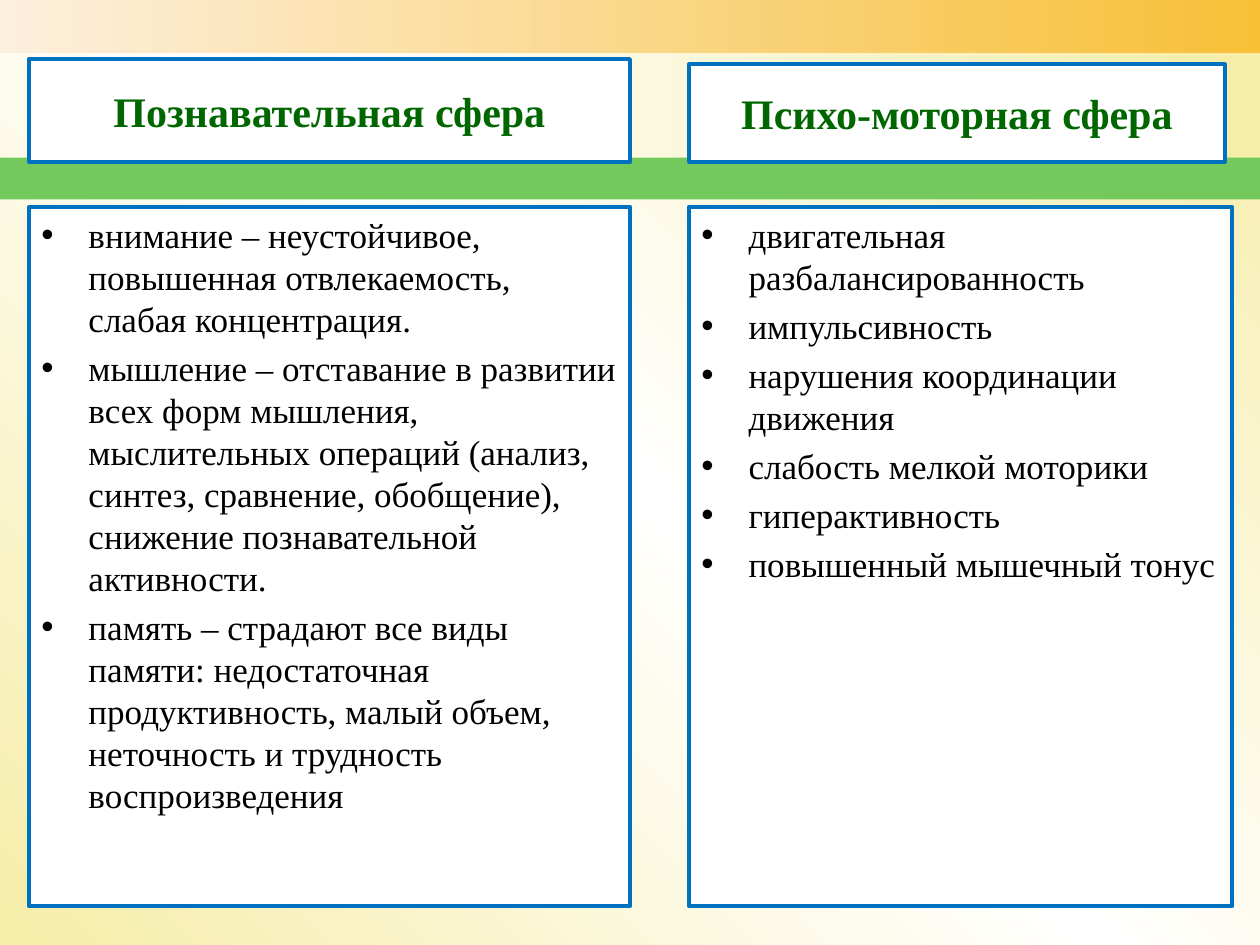
from copy import deepcopy
from dataclasses import dataclass

from lxml.etree import SubElement
from pptx import Presentation
from pptx.dml.color import RGBColor as Rgb
from pptx.enum.shapes import MSO_SHAPE as Shape
from pptx.enum.text import MSO_ANCHOR as Anchor, MSO_AUTO_SIZE as Auto, PP_ALIGN as Align
from pptx.oxml.ns import qn
from pptx.util import Cm, Pt


@dataclass(frozen=True)
class Theme:
    font: str = "Times New Roman"
    head: str = "006600"
    ink: str = "000000"
    edge: str = "0070C0"
    paper: str = "FFFFFF"
    cream: str = "F6EDA8"
    peach: str = "FDEFDD"
    gold: str = "F7C037"
    green: str = "73C95B"
    big: int = 24
    small: int = 20
    gap: int = 4
    rim: float = 2.25


T = Theme()

LEFT = {
    "head": "Познавательная сфера",
    "list": [
        "внимание – неустойчивое, повышенная отвлекаемость, слабая концентрация.",
        "мышление – отставание в развитии всех форм мышления, мыслительных операций "
        "(анализ, синтез, сравнение, обобщение), снижение познавательной активности.",
        "память – страдают все виды памяти: недостаточная продуктивность, малый объем, "
        "неточность и трудность воспроизведения",
    ],
}
RIGHT = {
    "head": "Психо-моторная сфера",
    "list": [
        "двигательная разбалансированность",
        "импульсивность",
        "нарушения координации движения",
        "слабость мелкой моторики",
        "гиперактивность",
        "повышенный мышечный тонус",
    ],
}

WIDE, HIGH = 25.4, 19.05
COL1, COL2 = 0.58, 13.89
TOP, TALL = 4.17, 14.1
INDENT = 0.95
BARS = [
    ((0, 0, WIDE, 1.07), [T.peach, T.gold]),
    ((5.51, 1.07, WIDE - 5.51, 2.11), [T.paper, T.cream]),
    ((0, 3.18, WIDE, 0.84), [T.green]),
]


def paint(fill, tints, angle=0):
    if len(tints) == 1:
        fill.solid()
        fill.fore_color.rgb = Rgb.from_string(tints[0])
        return
    fill.gradient()
    fill.gradient_angle = angle
    stops = fill._fill._gradFill.gsLst
    while len(stops) < len(tints):
        stops.append(deepcopy(stops[0]))
    for i, (stop, tint) in enumerate(zip(fill.gradient_stops, tints)):
        stop.position = i / (len(tints) - 1)
        stop.color.rgb = Rgb.from_string(tint)


def place(box, spot):
    box.left, box.top, box.width, box.height = map(Cm, spot)


def write(box, lines, size=T.small, tint=T.ink, bold=False,
          align=Align.LEFT, anchor=Anchor.TOP, dots=False):
    frame = box.text_frame
    frame.text = "\n".join(lines)
    frame.word_wrap = True
    frame.auto_size = Auto.NONE
    frame.vertical_anchor = anchor
    for i, para in enumerate(frame.paragraphs):
        if dots:
            props = para._p.get_or_add_pPr()
            props.set("marL", str(Cm(INDENT)))
            props.set("indent", str(-Cm(INDENT)))
            SubElement(props, qn("a:buFont"), typeface="Arial")
            SubElement(props, qn("a:buChar"), char="•")
        para.alignment = align
        para.space_before = Pt(T.gap if i else 0)
        for run in para.runs:
            font = run.font
            font.name, font.size, font.bold = T.font, Pt(size), bold
            font.color.rgb = Rgb.from_string(tint)


def panel(box, spot, lines, **form):
    place(box, spot)
    paint(box.fill, [T.paper])
    box.line.color.rgb = Rgb.from_string(T.edge)
    box.line.width = Pt(T.rim)
    write(box, lines, **form)


def main():
    deck = Presentation()
    deck.slide_width, deck.slide_height = Cm(WIDE), Cm(HIGH)
    slide = deck.slides.add_slide(deck.slide_layouts[1])
    shapes = slide.shapes
    paint(slide.background.fill, [T.cream, T.paper, T.cream], angle=45)

    for i, (spot, tints) in enumerate(BARS):
        bar = shapes.add_shape(Shape.RECTANGLE, *map(Cm, spot))
        bar.shadow.inherit = False
        bar.line.fill.background()
        paint(bar.fill, tints)
        shapes._spTree.insert(2 + i, bar._element)

    head = dict(size=T.big, tint=T.head, bold=True,
                align=Align.CENTER, anchor=Anchor.MIDDLE)
    blank = (0, 0, 1, 1)
    panel(shapes.title, (COL1, 1.19, 12.12, 2.08), [LEFT["head"]], **head)
    panel(slide.placeholders[1], (COL1, TOP, 12.12, TALL), LEFT["list"], dots=True)
    panel(shapes.add_textbox(*blank), (COL2, TOP, 10.95, TALL), RIGHT["list"], dots=True)
    panel(shapes.add_textbox(*blank), (COL2, 1.3, 10.8, 1.96), [RIGHT["head"]], **head)
    deck.save("out.pptx")


if __name__ == "__main__":
    main()
